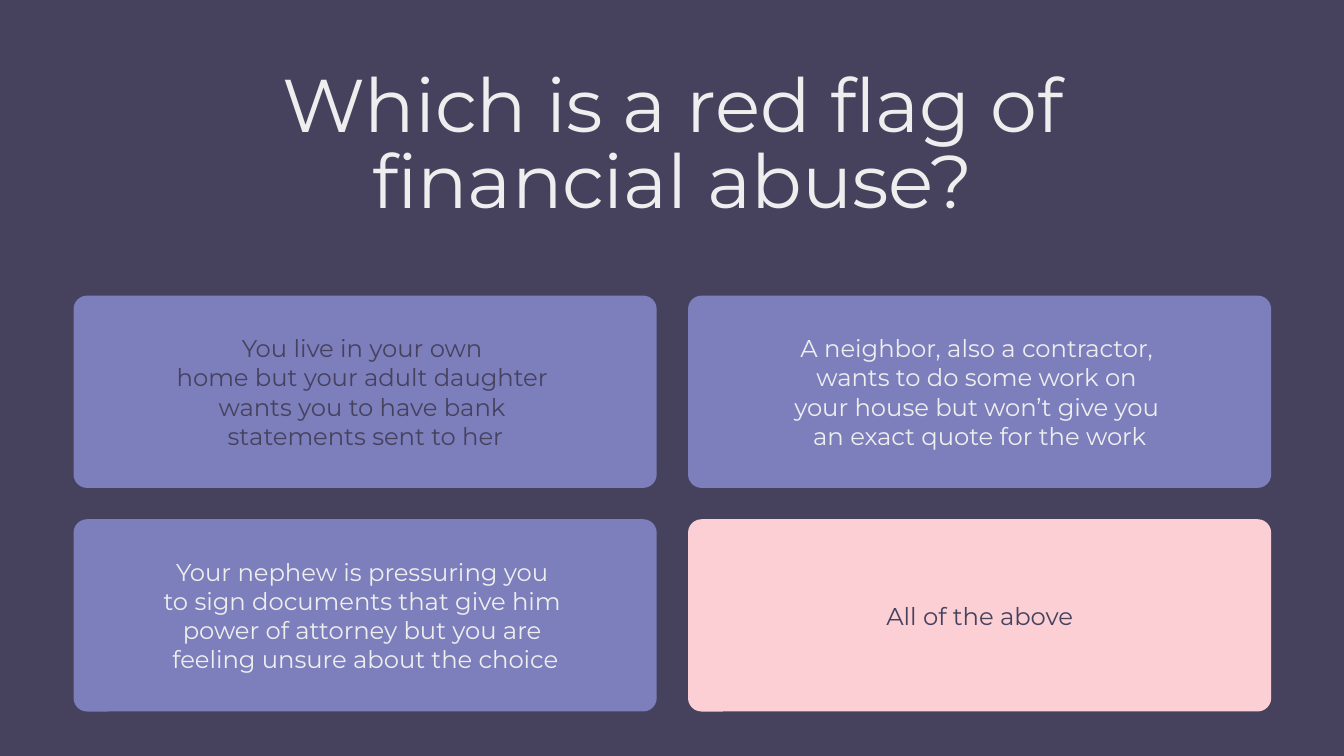
from copy import deepcopy

from pptx import Presentation
from pptx.dml.color import RGBColor
from pptx.enum.shapes import MSO_SHAPE
from pptx.enum.text import MSO_ANCHOR, MSO_AUTO_SIZE, PP_ALIGN
from pptx.util import Pt

FONT = "Montserrat"
DARK = "46425E"
LIGHT = "EEEEEE"
PURPLE = "7D7FBD"
PINK = "FBCFD4"

CARD_LEFT, CARD_TOP = 39.4, 158.4
CARD_WIDTH, CARD_HEIGHT = 312.4, 103
CARD_GAP = 16.8

ANSWERS = [
    ("You live in your own \nhome but your adult daughter \n"
     "wants you to have bank \nstatements sent to her", PURPLE, DARK),
    ("A neighbor, also a contractor, \nwants to do some work on \n"
     "your house but won’t give you \nan exact quote for the work", PURPLE, LIGHT),
    ("Your nephew is pressuring you \nto sign documents that give him \n"
     "power of attorney but you are \nfeeling unsure about the choice", PURPLE, LIGHT),
    ("All of the above", PINK, DARK),
]


def paint(fill, color):
    fill.solid()
    fill.fore_color.rgb = RGBColor.from_string(color)


def write_text(box, text, size, color, anchor=MSO_ANCHOR.MIDDLE,
               line_spacing=1.0, space_after=0):
    frame = box.text_frame
    frame.word_wrap = True
    frame.auto_size = MSO_AUTO_SIZE.NONE
    frame.vertical_anchor = anchor
    frame.margin_left = frame.margin_right = Pt(7.2)
    frame.margin_top = frame.margin_bottom = Pt(7.2)
    para = frame.paragraphs[0]
    para.text = text
    para.alignment = PP_ALIGN.CENTER
    para.line_spacing = line_spacing
    para.space_before = Pt(0)
    para.space_after = Pt(space_after)
    for span in para.runs:
        span.font.name = FONT
        span.font.size = Pt(size)
        paint(span.font.fill, color)
    for line_break in para._p.br_lst if hasattr(para._p, "br_lst") else para._p.xpath("a:br"):
        line_break.append(deepcopy(para.runs[0].font._rPr))


def add_title(page, text):
    title = page.shapes.title
    title.left, title.top = Pt(133.8), Pt(31)
    title.width, title.height = Pt(452.9), Pt(98)
    write_text(title, text, size=40, color=LIGHT, anchor=MSO_ANCHOR.TOP,
               line_spacing=0.85, space_after=5)


def add_card(page, row, column, text, fill, color):
    card = page.shapes.add_shape(
        MSO_SHAPE.ROUNDED_RECTANGLE,
        Pt(CARD_LEFT + column * (CARD_WIDTH + CARD_GAP)),
        Pt(CARD_TOP + row * (CARD_HEIGHT + CARD_GAP)),
        Pt(CARD_WIDTH), Pt(CARD_HEIGHT))
    card.adjustments[0] = 0.07
    card.shadow.inherit = False
    card.line.fill.background()
    paint(card.fill, fill)
    write_text(card, text, size=13, color=color)


def main():
    deck = Presentation()
    deck.slide_width, deck.slide_height = Pt(720), Pt(405)
    page = deck.slides.add_slide(deck.slide_layouts[5])
    paint(page.background.fill, DARK)
    add_title(page, "Which is a red flag of financial abuse?")
    for index, (text, fill, color) in enumerate(ANSWERS):
        row, column = divmod(index, 2)
        add_card(page, row, column, text, fill, color)
    deck.save("out.pptx")


if __name__ == "__main__":
    main()
